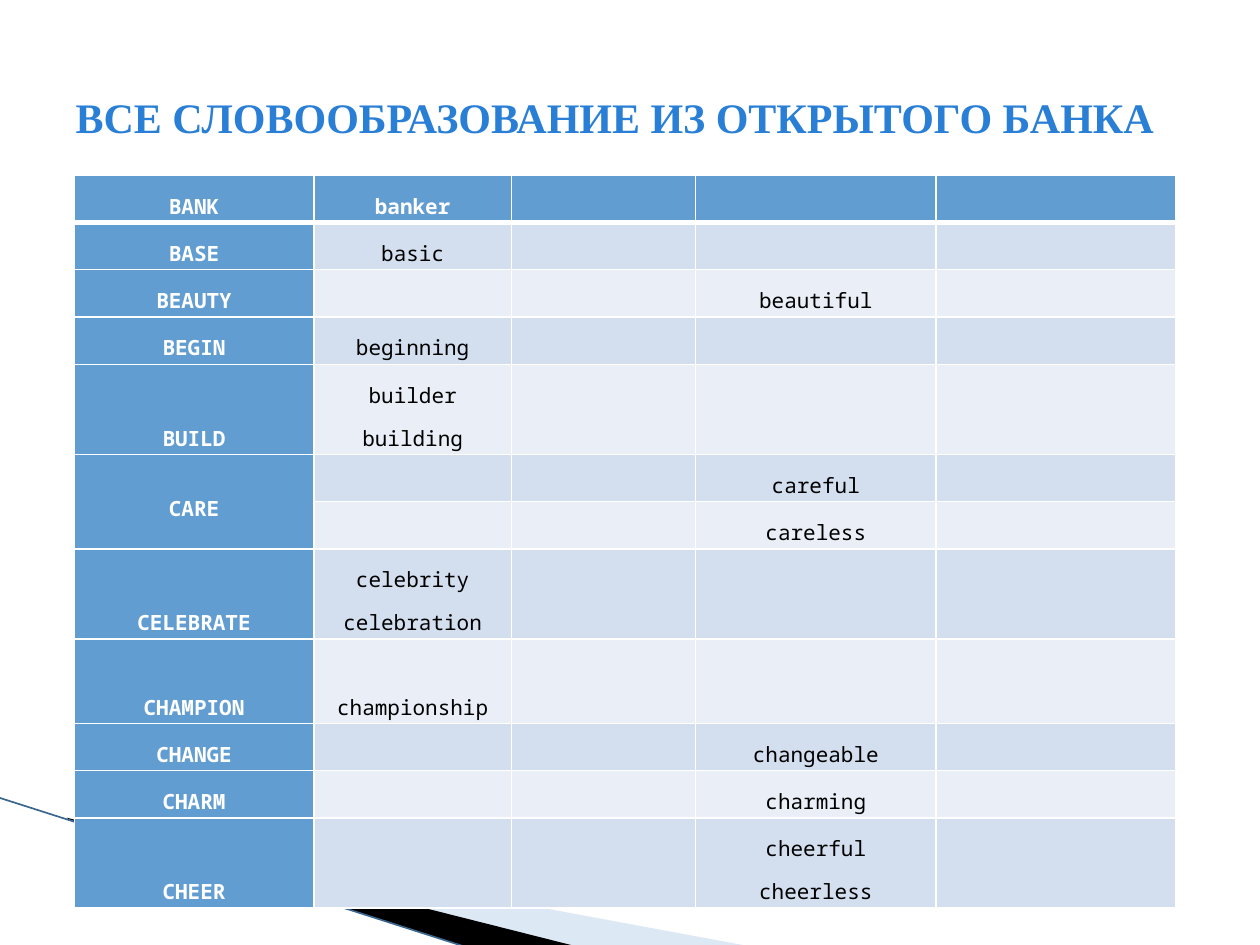
import pptx
import pptx.dml.color
import pptx.enum.shapes
import pptx.enum.text
import pptx.oxml
import pptx.oxml.ns
import pptx.util

Inches = pptx.util.Inches
RGBColor = pptx.dml.color.RGBColor
Anchor = pptx.enum.text.MSO_ANCHOR
Align = pptx.enum.text.PP_ALIGN

WHITE = RGBColor(0xFF, 0xFF, 0xFF)
BLACK = RGBColor(0x00, 0x00, 0x00)
TITLE_BLUE = RGBColor(0x29, 0x7F, 0xD5)
HEADER_BLUE = RGBColor(0x62, 0x9D, 0xD1)
BAND_DARK = RGBColor(0xD3, 0xDF, 0xEE)
BAND_LIGHT = RGBColor(0xEA, 0xEF, 0xF7)
WEDGE_BLUE = RGBColor(0xAB, 0xC6, 0xE6)
LINE_BLUE = RGBColor(0x3A, 0x66, 0x90)

NOUN, ADJECTIVE = 1, 3
WORDS = [
    ("BANK", NOUN, "banker", 0.37),
    ("BASE", NOUN, "basic", 0.37),
    ("BEAUTY", ADJECTIVE, "beautiful", 0.37),
    ("BEGIN", NOUN, "beginning", 0.37),
    ("BUILD", NOUN, "builder\nbuilding", 0.7),
    ("CARE", ADJECTIVE, "careful", 0.37),
    ("", ADJECTIVE, "careless", 0.37),
    ("CELEBRATE", NOUN, "celebrity\ncelebration", 0.7),
    ("CHAMPION", NOUN, "championship", 0.67),
    ("CHANGE", ADJECTIVE, "changeable", 0.37),
    ("CHARM", ADJECTIVE, "charming", 0.37),
    ("CHEER", ADJECTIVE, "cheerful\ncheerless", 0.7),
]
CARE_ROW = 5
COLUMN_WIDTHS = [1.9, 1.57, 1.46, 1.91, 1.9]


def make_element(tag, **attributes):
    element = pptx.oxml.parse_xml(f"<a:{tag} {pptx.oxml.ns.nsdecls('a')}/>")
    for name, value in attributes.items():
        element.set(name, str(value))
    return element


def add_wedge(page, points, color, opacity=None):
    corners = [(Inches(x), Inches(y)) for x, y in points]
    builder = page.shapes.build_freeform(*corners[0])
    builder.add_line_segments(corners[1:], close=True)
    wedge = builder.convert_to_shape()
    wedge.shadow.inherit = False
    wedge.fill.solid()
    wedge.fill.fore_color.rgb = color
    wedge.line.fill.background()
    if opacity is not None:
        fill_color = wedge._element.spPr.find(".//" + pptx.oxml.ns.qn("a:srgbClr"))
        fill_color.append(make_element("alpha", val=opacity * 1000))


def add_line(page, start, end, color, width):
    line = page.shapes.add_connector(
        pptx.enum.shapes.MSO_CONNECTOR.STRAIGHT,
        *(Inches(length) for length in start + end),
    )
    line.line.color.rgb = color
    line.line.width = pptx.util.Pt(width)
    line._element.spPr.append(make_element("effectLst"))


def set_borders(cell, top, bottom):
    properties = cell._tc.get_or_add_tcPr()
    widths = [("lnL", 1), ("lnR", 1), ("lnT", top), ("lnB", bottom)]
    for position, (tag, width) in enumerate(widths):
        border = make_element(tag, w=pptx.util.Pt(width))
        fill = make_element("solidFill")
        fill.append(make_element("srgbClr", val=WHITE))
        border.append(fill)
        properties.insert(position, border)


def format_cell(cell, text, fill, color, bold):
    cell.margin_left = cell.margin_right = Inches(0.03)
    cell.margin_top = cell.margin_bottom = pptx.util.Pt(1.25)
    cell.vertical_anchor = Anchor.BOTTOM
    cell.fill.solid()
    cell.fill.fore_color.rgb = fill
    cell.text_frame.text = text
    for para in cell.text_frame.paragraphs:
        if not para.runs:
            para._p.append(make_element("endParaRPr", sz=1200))
            continue
        para.alignment = Align.CENTER
        para.line_spacing = 1.5
        for span in para.runs:
            span.font.name = "Noto Sans Mono"
            span.font.size = pptx.util.Pt(12)
            span.font.bold = bold
            span.font.color.rgb = color


def add_word_table(page):
    frame = page.shapes.add_table(
        len(WORDS), len(COLUMN_WIDTHS),
        Inches(0.59), Inches(1.39), Inches(8.74), Inches(5.75),
    )
    table = frame.table
    for column, width in zip(table.columns, COLUMN_WIDTHS):
        column.width = Inches(width)
    for row_index, (root, word_column, derived, height) in enumerate(WORDS):
        table.rows[row_index].height = Inches(height)
        band = BAND_DARK if row_index % 2 else BAND_LIGHT
        texts = {0: root, word_column: derived}
        for column_index in range(len(COLUMN_WIDTHS)):
            cell = table.cell(row_index, column_index)
            is_header = row_index == 0 or column_index == 0
            format_cell(
                cell,
                texts.get(column_index, ""),
                HEADER_BLUE if is_header else band,
                WHITE if is_header else BLACK,
                is_header,
            )
            set_borders(
                cell,
                top=3 if row_index == 1 else 1,
                bottom=3 if row_index == 0 else 1,
            )
    care = table.cell(CARE_ROW, 0)
    care.merge(table.cell(CARE_ROW + 1, 0))
    care.vertical_anchor = Anchor.MIDDLE


def place_title(page, text):
    title = page.shapes.title
    title.left, title.top = Inches(0.5), Inches(0.3)
    title.width, title.height = Inches(9), Inches(1.25)
    frame = title.text_frame
    frame.text = text
    frame.word_wrap = True
    frame.vertical_anchor = Anchor.MIDDLE
    para = frame.paragraphs[0]
    para.alignment = Align.LEFT
    font = para.runs[0].font
    font.name = "Times New Roman"
    font.size = pptx.util.Pt(24)
    font.bold = True
    font.color.rgb = TITLE_BLUE
    page.shapes._spTree.append(title._element)


def main():
    deck = pptx.Presentation()
    deck.slide_width, deck.slide_height = Inches(10), Inches(7.5)
    page = deck.slides.add_slide(deck.slide_layouts[5])
    add_wedge(
        page,
        [(0.55, 6.51), (5.95, 7.51), (4.56, 7.51), (0.55, 6.5)],
        WEDGE_BLUE,
        opacity=40,
    )
    add_wedge(
        page, [(0.53, 6.49), (4.57, 7.51), (3.72, 7.52), (0.54, 6.5)], BLACK
    )
    add_line(page, (-0.01, 6.33), (3.71, 7.52), LINE_BLUE, 0.95)
    add_word_table(page)
    place_title(page, "ВСЕ СЛОВООБРАЗОВАНИЕ ИЗ ОТКРЫТОГО БАНКА")
    deck.save("out.pptx")


if __name__ == "__main__":
    main()
